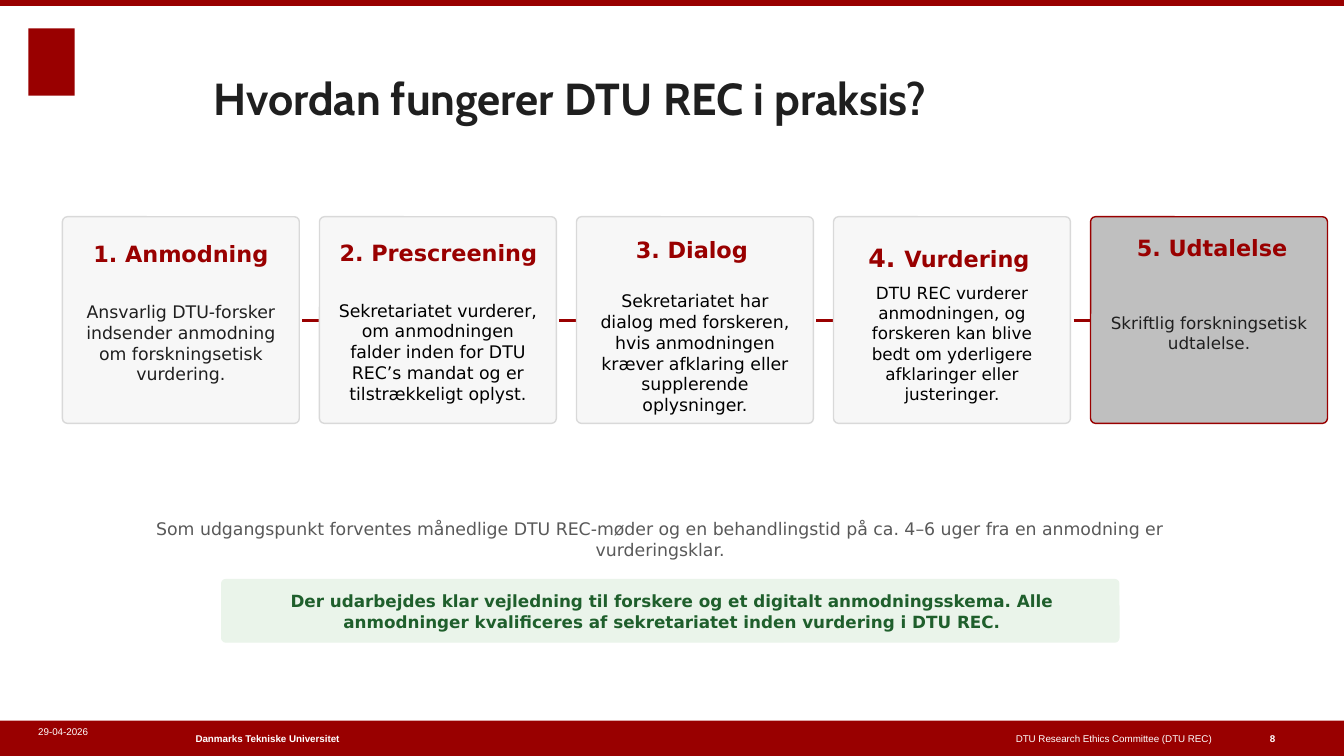
from dataclasses import dataclass

from lxml import etree
from pptx import Presentation
from pptx.dml.color import RGBColor
from pptx.enum.shapes import MSO_CONNECTOR, MSO_SHAPE
from pptx.enum.text import MSO_ANCHOR, PP_ALIGN
from pptx.oxml.ns import qn
from pptx.util import Pt

STRAIGHT = MSO_CONNECTOR.STRAIGHT
RECTANGLE, ROUNDED = MSO_SHAPE.RECTANGLE, MSO_SHAPE.ROUNDED_RECTANGLE
TOP, MIDDLE = MSO_ANCHOR.TOP, MSO_ANCHOR.MIDDLE
LEFT, CENTER, RIGHT = PP_ALIGN.LEFT, PP_ALIGN.CENTER, PP_ALIGN.RIGHT


@dataclass(frozen=True)
class Theme:
    """Colours, fonts and type sizes of the deck."""
    red: str = "990000"
    white: str = "FFFFFF"
    ink: str = "1F1F1F"
    black: str = "000000"
    muted: str = "595959"
    card: str = "F7F7F7"
    card_line: str = "D9D9D9"
    final_card: str = "BFBFBF"
    green: str = "1F5F2C"
    pale_green: str = "EAF4EA"
    title_font: str = "Cabin"
    body_font: str = "DejaVu Sans"
    footer_font: str = "Arial"
    title: float = 32
    number: float = 18
    heading: float = 16
    body: float = 12.4
    small: float = 12
    footer: float = 7


class SlideBuilder:
    """Draws themed elements on one slide, with lengths in points."""

    def __init__(self, slide, theme):
        self.shapes = slide.shapes
        self.theme = theme

    def panel(self, kind, left, top, width, height, fill, line=None, radius=None):
        shape = self.shapes.add_shape(kind, Pt(left), Pt(top), Pt(width), Pt(height))
        shape.shadow.inherit = False
        shape.fill.solid()
        shape.fill.fore_color.rgb = RGBColor.from_string(fill)
        if line:
            shape.line.color.rgb = RGBColor.from_string(line)
            shape.line.width = Pt(1)
        else:
            shape.line.fill.background()
        if radius is not None:
            shape.adjustments[0] = radius

    def text(self, left, top, width, height, spans, color, font=None, bold=False,
             align=CENTER, anchor=MIDDLE, inset=(0, 0)):
        box = self.shapes.add_textbox(Pt(left), Pt(top), Pt(width), Pt(height))
        frame = box.text_frame
        frame.word_wrap = True
        frame.vertical_anchor = anchor
        frame.margin_left = frame.margin_right = Pt(inset[0])
        frame.margin_top = frame.margin_bottom = Pt(inset[1])
        para = frame.paragraphs[0]
        para.alignment = align
        for words, size in spans:
            span = para.add_run()
            span.text = words
            span.font.name = font or self.theme.body_font
            span.font.size = Pt(size)
            span.font.bold = bold
            span.font.color.rgb = RGBColor.from_string(color)

    def arrow(self, start, end, height):
        connector = self.shapes.add_connector(
            STRAIGHT, Pt(start), Pt(height), Pt(end), Pt(height))
        connector.line.color.rgb = RGBColor.from_string(self.theme.red)
        connector.line.width = Pt(2)
        line = connector.line._get_or_add_ln()
        etree.SubElement(line, qn("a:tailEnd"), type="triangle")
        etree.SubElement(connector._element.spPr, qn("a:effectLst"))

    def card(self, left, fill, line, heading, heading_box, body, body_size,
             body_color, body_top, body_height):
        self.panel(ROUNDED, left, 154.8, 169.2, 147.6, fill, line, 0.024)
        offset, top, width, height = heading_box
        self.text(left + offset, top, width, height, heading, self.theme.red, bold=True)
        self.text(left + 13, body_top, 143.3, body_height, [(body, body_size)], body_color)

    def footer(self, left, top, width, height, words, **style):
        self.text(left, top, width, height, [(words, self.theme.footer)],
                  self.theme.white, self.theme.footer_font, **style)


def main():
    """Build the process slide and save it."""
    deck = Presentation()
    deck.slide_width, deck.slide_height = Pt(960), Pt(540)
    theme = Theme()
    page = SlideBuilder(deck.slides.add_slide(deck.slide_layouts[6]), theme)
    page.panel(RECTANGLE, 0, 514.8, 960, 25.2, theme.red)
    page.panel(RECTANGLE, 20.2, 20.2, 33.1, 48.2, theme.red)
    page.footer(139.7, 514.8, 267.8, 25.2, "Danmarks Tekniske Universitet",
                bold=True, align=LEFT)
    page.panel(RECTANGLE, 0, 0, 960, 4.3, theme.red)

    steps = [
        ([("1. Anmodning", theme.heading)], (10.8, 170.6, 147.6, 21.6),
         "Ansvarlig DTU-forsker indsender anmodning om forskningsetisk vurdering.",
         theme.body, theme.ink, 216, 57.6),
        ([("2. Prescreening", theme.heading)], (5, 169.2, 159.8, 22.3),
         "Sekretariatet vurderer, om anmodningen falder inden for DTU REC’s mandat "
         "og er tilstrækkeligt oplyst.",
         theme.body, theme.black, 216, 70.6),
        ([("3. Dialog", theme.heading)], (8.6, 167.8, 147.6, 21.6),
         "Sekretariatet har dialog med forskeren, hvis anmodningen kræver afklaring "
         "eller supplerende oplysninger.",
         theme.body, theme.black, 208.8, 86.4),
        ([("4. ", theme.number), ("Vurdering", theme.heading)], (-5, 172.8, 175, 21.6),
         "DTU REC vurderer anmodningen, og forskeren kan blive bedt om yderligere "
         "afklaringer eller justeringer.",
         theme.small, theme.black, 190.1, 110.2),
        ([("5. Udtalelse", theme.heading)], (13, 166.3, 147.6, 21.6),
         "Skriftlig forskningsetisk udtalelse.",
         theme.small, theme.ink, 208.8, 57.6),
    ]
    for index, step in enumerate(steps):
        left = 44.6 + index * 183.6
        final = index == len(steps) - 1
        fill, line = ((theme.final_card, theme.red) if final
                      else (theme.card, theme.card_line))
        page.card(left, fill, line, *step)
        if not final:
            page.arrow(left + 171.4, left + 201.6, 229)

    page.text(72, 374.4, 799.2, 21.6, [(
        "Som udgangspunkt forventes månedlige DTU REC-møder og en behandlingstid på "
        "ca. 4–6 uger fra en anmodning er vurderingsklar.", theme.body)], theme.muted)
    page.panel(ROUNDED, 158.4, 414, 640.8, 44.6, theme.pale_green, theme.pale_green, 0.065)
    page.text(177.8, 419, 604.8, 35.3, [(
        "Der udarbejdes klar vejledning til forskere og et digitalt anmodningsskema. "
        "Alle anmodninger kvalificeres af sekretariatet inden vurdering i DTU REC.",
        theme.small)], theme.green, bold=True)
    page.text(145.4, 46.8, 733, 76.3, [("Hvordan fungerer DTU REC i praksis?", theme.title)],
              theme.ink, theme.title_font, bold=True, align=LEFT, anchor=TOP, inset=(7.2, 3.6))
    page.footer(439.9, 514.8, 432.7, 25.2, "DTU Research Ethics Committee (DTU REC)",
                align=RIGHT, inset=(7.2, 3.6))
    page.footer(20.2, 514.8, 87.1, 25.2, "29-04-2026",
                align=LEFT, anchor=TOP, inset=(7.2, 3.6))
    page.footer(900, 519.8, 40.3, 15.8, "8",
                bold=True, align=LEFT, anchor=TOP, inset=(7.2, 3.6))
    deck.save("out.pptx")


if __name__ == "__main__":
    main()
